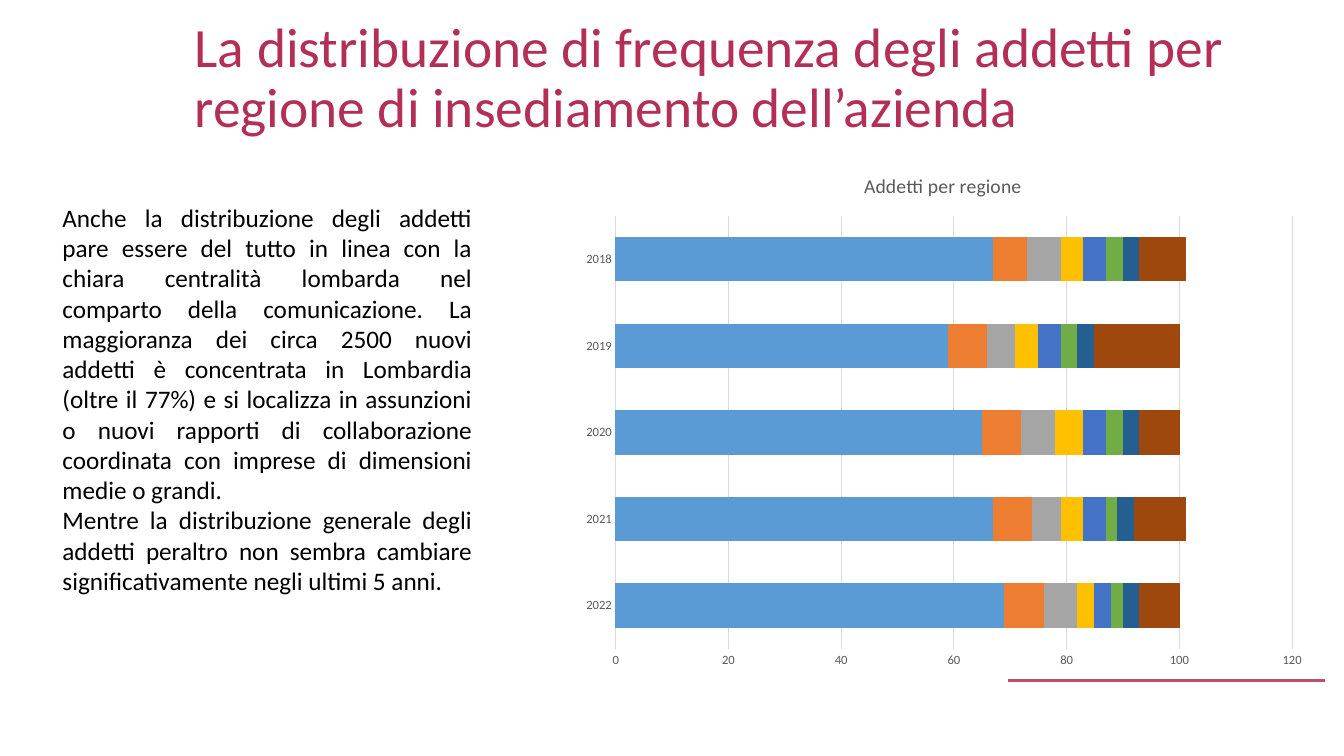
from dataclasses import dataclass

from lxml import etree
from pptx import Presentation
from pptx.chart.axis import _BaseAxis
from pptx.chart.chart import Chart
from pptx.chart.data import CategoryChartData
from pptx.dml.color import RGBColor
from pptx.enum.chart import XL_CHART_TYPE, XL_TICK_MARK
from pptx.enum.shapes import MSO_CONNECTOR
from pptx.enum.text import MSO_ANCHOR, PP_ALIGN
from pptx.oxml.ns import qn
from pptx.slide import Slide
from pptx.util import Emu, Pt

STACKED_BAR = XL_CHART_TYPE.BAR_STACKED
NO_TICK = XL_TICK_MARK.NONE
STRAIGHT = MSO_CONNECTOR.STRAIGHT
TOP, MIDDLE = MSO_ANCHOR.TOP, MSO_ANCHOR.MIDDLE
LEFT, JUSTIFY = PP_ALIGN.LEFT, PP_ALIGN.JUSTIFY

EMU_PER_PX = 9525
FONT = "Calibri"
BLACK = RGBColor(0x00, 0x00, 0x00)
CRIMSON = RGBColor(0xB3, 0x2F, 0x55)
ROSE = RGBColor(0xBD, 0x50, 0x6F)
DARK_GREY = RGBColor(0x59, 0x59, 0x59)
LIGHT_GREY = RGBColor(0xD9, 0xD9, 0xD9)


@dataclass(frozen=True)
class Area:
    left: int
    top: int
    width: int
    height: int

    def emu(self) -> tuple[Emu, Emu, Emu, Emu]:
        return px(self.left), px(self.top), px(self.width), px(self.height)


@dataclass(frozen=True)
class TextBlock:
    area: Area
    paragraphs: tuple[str, ...]
    size: float
    color: RGBColor
    align: PP_ALIGN
    anchor: MSO_ANCHOR
    line_spacing: float


@dataclass(frozen=True)
class Region:
    color: RGBColor
    shares: tuple[int, ...]


TITLE = TextBlock(
    Area(176, 16, 1104, 119),
    ("La distribuzione di frequenza degli addetti per regione di insediamento dell’azienda",),
    39.6, CRIMSON, LEFT, MIDDLE, 0.9,
)
COMMENTARY = TextBlock(
    Area(50, 188, 409, 388),
    (
        "Anche la distribuzione degli addetti pare essere del tutto in linea con la chiara "
        "centralità lombarda nel comparto della comunicazione. La maggioranza dei circa 2500 "
        "nuovi addetti è concentrata in Lombardia (oltre il 77%) e si localizza in assunzioni "
        "o nuovi rapporti di collaborazione coordinata con imprese di dimensioni medie o grandi.",
        "Mentre la distribuzione generale degli addetti peraltro non sembra cambiare "
        "significativamente negli ultimi 5 anni.",
    ),
    18, BLACK, JUSTIFY, TOP, 1.0,
)

CHART_AREA = Area(544, 146, 708, 497)
PLOT_LAYOUT = {"x": 0.06, "y": 0.12, "w": 0.91, "h": 0.83}
YEARS = ("2022", "2021", "2020", "2019", "2018")
REGIONS = (
    Region(RGBColor(0x5B, 0x9B, 0xD5), (69, 67, 65, 59, 67)),
    Region(RGBColor(0xED, 0x7D, 0x31), (7, 7, 7, 7, 6)),
    Region(RGBColor(0xA5, 0xA5, 0xA5), (6, 5, 6, 5, 6)),
    Region(RGBColor(0xFF, 0xC0, 0x00), (3, 4, 5, 4, 4)),
    Region(RGBColor(0x44, 0x72, 0xC4), (3, 4, 4, 4, 4)),
    Region(RGBColor(0x70, 0xAD, 0x47), (2, 2, 3, 3, 3)),
    Region(RGBColor(0x25, 0x5E, 0x91), (3, 3, 3, 3, 3)),
    Region(RGBColor(0x9E, 0x48, 0x0E), (7, 9, 7, 15, 8)),
)


def px(length: int) -> Emu:
    return Emu(length * EMU_PER_PX)


def add_text(page: Slide, block: TextBlock) -> None:
    box = page.shapes.add_textbox(*block.area.emu())
    frame = box.text_frame
    frame.word_wrap = True
    frame.vertical_anchor = block.anchor
    frame.text = "\n".join(block.paragraphs)
    for para in frame.paragraphs:
        para.alignment = block.align
        para.line_spacing = block.line_spacing
        para.font.name = FONT
        para.font.size = Pt(block.size)
        para.font.color.rgb = block.color


def add_rule(page: Slide, left: int, right: int, top: int) -> None:
    rule = page.shapes.add_connector(STRAIGHT, px(left), px(top), px(right), px(top))
    rule.line.color.rgb = ROSE
    rule.line.width = Pt(2)
    etree.SubElement(rule._element.spPr, qn("a:effectLst"))


def style_axis(axis: _BaseAxis) -> None:
    axis.major_tick_mark = NO_TICK
    axis.minor_tick_mark = NO_TICK
    font = axis.tick_labels.font
    font.name = FONT
    font.size = Pt(9)
    font.color.rgb = DARK_GREY


def place_plot(chart: Chart) -> None:
    """Fix the inner plot area as fractions of the chart area."""
    plot_area = chart._chartSpace.chart.plotArea
    layout = plot_area.find(qn("c:layout"))
    if layout is None:
        layout = etree.Element(qn("c:layout"))
        plot_area.insert(0, layout)
    manual = etree.SubElement(layout, qn("c:manualLayout"))
    settings = {"layoutTarget": "inner", "xMode": "edge", "yMode": "edge", **PLOT_LAYOUT}
    for tag, value in settings.items():
        etree.SubElement(manual, qn(f"c:{tag}")).set("val", str(value))


def add_region_chart(page: Slide) -> None:
    data = CategoryChartData()
    data.categories = YEARS
    for number, region in enumerate(REGIONS, start=1):
        data.add_series(f"Series {number}", region.shares)
    chart = page.shapes.add_chart(STACKED_BAR, *CHART_AREA.emu(), data).chart
    chart.has_legend = False
    chart.font.name = FONT
    chart.font.size = Pt(10)
    chart.font.color.rgb = BLACK

    chart.has_title = True
    chart.chart_title.include_in_layout = False
    title = chart.chart_title.text_frame.paragraphs[0]
    title.text = "Addetti per regione"
    title.font.name = FONT
    title.font.size = Pt(14)
    title.font.bold = False
    title.font.color.rgb = DARK_GREY

    plot = chart.plots[0]
    plot.gap_width = 100
    plot.overlap = 100
    plot.vary_by_categories = False
    for series, region in zip(plot.series, REGIONS):
        series.format.fill.solid()
        series.format.fill.fore_color.rgb = region.color
        series.format.line.color.rgb = region.color
        series.format.line.width = Pt(0.75)

    years, shares = chart.category_axis, chart.value_axis
    style_axis(years)
    style_axis(shares)
    shares.minimum_scale, shares.maximum_scale, shares.major_unit = 0, 120, 20
    shares.format.line.fill.background()
    shares.has_major_gridlines = True
    for line in (years.format.line, shares.major_gridlines.format.line):
        line.color.rgb = LIGHT_GREY
        line.width = Pt(0.75)
    place_plot(chart)


def main() -> None:
    deck = Presentation()
    deck.slide_width, deck.slide_height = px(1280), px(720)
    page = deck.slides.add_slide(deck.slide_layouts[6])
    add_rule(page, 960, 1262, 648)
    add_text(page, TITLE)
    add_text(page, COMMENTARY)
    add_region_chart(page)
    deck.save("out.pptx")


if __name__ == "__main__":
    main()
